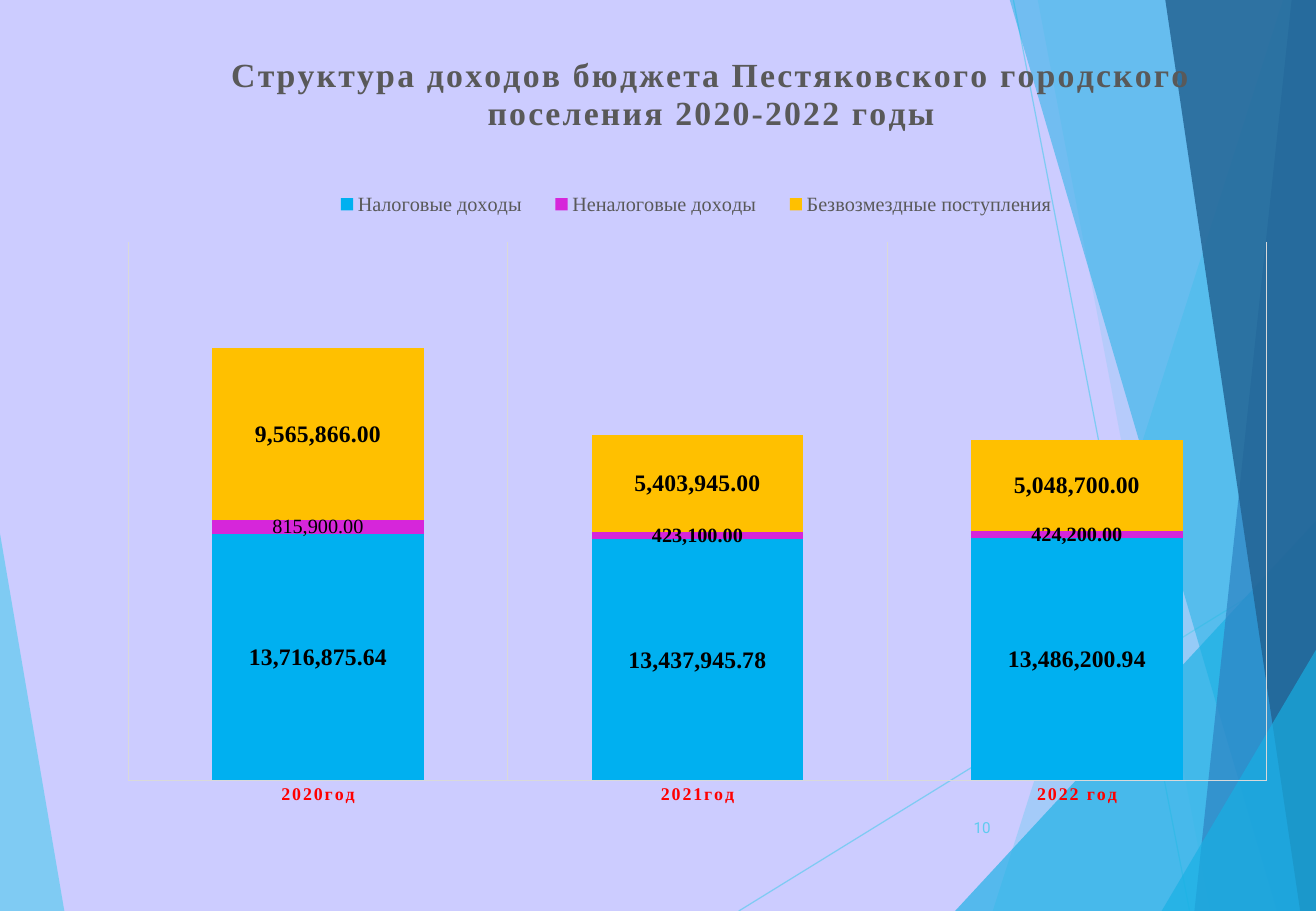
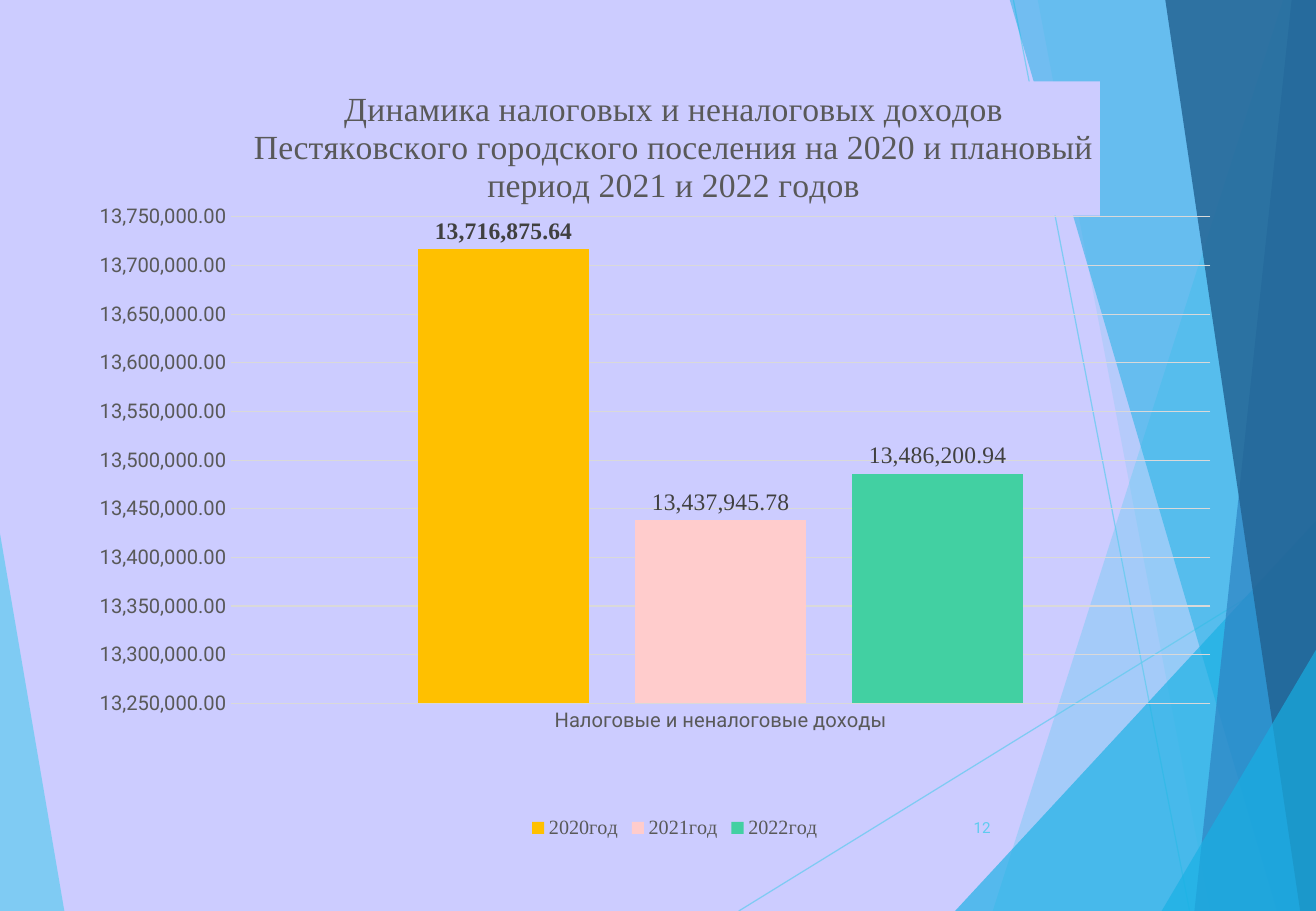
from dataclasses import dataclass

from lxml.etree import SubElement
from pptx import Presentation
from pptx.chart.data import CategoryChartData
from pptx.dml.color import RGBColor
from pptx.enum.chart import XL_CHART_TYPE as ChartType
from pptx.enum.chart import XL_LABEL_POSITION as LabelPosition
from pptx.enum.chart import XL_LEGEND_POSITION as LegendPosition
from pptx.enum.chart import XL_TICK_MARK as TickMark
from pptx.enum.shapes import MSO_CONNECTOR as Connector
from pptx.enum.text import MSO_ANCHOR as Anchor
from pptx.enum.text import PP_ALIGN as Align
from pptx.oxml import parse_xml
from pptx.oxml.ns import nsdecls, qn
from pptx.util import Inches, Pt


@dataclass(frozen=True)
class Theme:
    background: str = "CCCCFF"
    sky: str = "5FCBEF"
    cyan: str = "17B0E4"
    blue: str = "2E83C3"
    navy: str = "226292"
    grid: str = "D9D9D9"
    gray: str = "595959"
    dark: str = "404040"
    black: str = "000000"
    red: str = "FF0000"
    tax: str = "00B0F0"
    non_tax: str = "D626DA"
    gold: str = "FFC000"
    pink: str = "FFCCCC"
    green: str = "42D0A2"
    sans: str = "Roboto"
    serif: str = "Times New Roman"
    title_size: float = 20
    label_size: float = 14
    text_size: float = 12
    year_size: float = 10.6
    chart_size: float = 10
    number_size: float = 9
    letter_gap: float = 1.2
    hairline: float = 0.75
    number_format: str = "#,##0.00"


THEME = Theme()
WIDTH, HEIGHT = 10.83, 7.5

# Colour, opacity in percent, corners
LEFT_FACET = (THEME.sky, 70, [(0, 4.39), (0.53, HEIGHT), (0, HEIGHT)])
RIGHT_FACETS = [
    (THEME.sky, 36, [(10.56, 0), (8.17, HEIGHT), (WIDTH, HEIGHT), (WIDTH, 0)]),
    (THEME.sky, 20, [(8.54, 0), (9.96, HEIGHT), (WIDTH, HEIGHT), (WIDTH, 0)]),
    (THEME.cyan, 66, [(7.86, HEIGHT), (WIDTH, 4.29), (WIDTH, HEIGHT)]),
    (THEME.cyan, 50, [(8.31, 0), (10.51, HEIGHT), (WIDTH, HEIGHT), (WIDTH, 0)]),
    (THEME.blue, 70, [(10.63, 0), (9.83, HEIGHT), (WIDTH, HEIGHT), (WIDTH, 0)]),
    (THEME.navy, 82, [(9.59, 0), (10.7, HEIGHT), (WIDTH, HEIGHT), (WIDTH, 0)]),
    (THEME.cyan, 66, [(9.56, HEIGHT), (WIDTH, 5.35), (WIDTH, HEIGHT)]),
]
RAYS = [((6.08, HEIGHT), (WIDTH, 4.57)), ((8.34, 0), (9.79, HEIGHT))]


def rgb(color):
    return RGBColor.from_string(color)


def set_fill(fill, color):
    fill.solid()
    fill.fore_color.rgb = rgb(color)


def set_line(line, color):
    line.color.rgb = rgb(color)
    line.width = Pt(THEME.hairline)


def set_font(font, size, color, name=THEME.serif, bold=False):
    font.size = Pt(size)
    font.name = name
    font.bold = bold
    font.color.rgb = rgb(color)


def set_opacity(shape, percent):
    for color in shape.element.spPr.iter(qn("a:srgbClr")):
        SubElement(color, qn("a:alpha"), val=str(percent * 1000))


def add_facet(slide, color, opacity, corners):
    points = [(Inches(x), Inches(y)) for x, y in corners]
    builder = slide.shapes.build_freeform(*points[0])
    builder.add_line_segments(points[1:], close=True)
    shape = builder.convert_to_shape()
    shape.shadow.inherit = False
    set_fill(shape.fill, color)
    shape.line.fill.background()
    set_opacity(shape, opacity)


def add_ray(slide, start, end):
    ends = [Inches(value) for value in start + end]
    ray = slide.shapes.add_connector(Connector.STRAIGHT, *ends)
    set_line(ray.line, THEME.sky)
    set_opacity(ray, 70)
    SubElement(ray.element.spPr, qn("a:effectLst"))


def add_page_number(slide, number):
    box = slide.shapes.add_textbox(Inches(7.64), Inches(6.61), Inches(0.61), Inches(0.4))
    frame = box.text_frame
    frame.word_wrap = True
    frame.vertical_anchor = Anchor.MIDDLE
    paragraph = frame.paragraphs[0]
    paragraph.alignment = Align.RIGHT
    run = paragraph.add_run()
    run.text = str(number)
    set_font(run.font, THEME.number_size, THEME.sky, THEME.sans)


def add_base_slide(presentation):
    slide = presentation.slides.add_slide(presentation.slide_layouts[6])
    add_facet(slide, *LEFT_FACET)
    for start, end in RAYS:
        add_ray(slide, start, end)
    for facet in RIGHT_FACETS:
        add_facet(slide, *facet)
    return slide


def chart_part(chart, tag):
    return next(chart.element.iter(qn(tag)))


def place(part, index, x, y, width=None, height=None, inner=False):
    """Give a chart part a fixed place, in fractions of the chart."""
    for old in part.findall(qn("c:layout")):
        part.remove(old)
    layout = parse_xml(f"<c:layout {nsdecls('c')}><c:manualLayout/></c:layout>")
    manual = layout[0]
    if inner:
        SubElement(manual, qn("c:layoutTarget"), val="inner")
    for tag in ("xMode", "yMode"):
        SubElement(manual, qn("c:" + tag), val="edge")
    for tag, value in zip("xywh", (x, y, width, height)):
        if value is not None:
            SubElement(manual, qn("c:" + tag), val=str(value))
    part.insert(index, layout)


def clear_background(chart):
    xml = f"<c:spPr {nsdecls('c', 'a')}><a:noFill/><a:ln><a:noFill/></a:ln></c:spPr>"
    chart_part(chart, "c:plotArea").append(parse_xml(xml))
    chart.element.find(qn("c:txPr")).addprevious(parse_xml(xml))


def add_column_chart(slide, kind, area, categories, series, plot_area, gap, overlap):
    """Series are (name, values, colour, label size, label bold)."""
    data = CategoryChartData(number_format=THEME.number_format)
    data.categories = categories
    for name, values, *_ in series:
        data.add_series(name, values)
    lengths = [Inches(value) for value in area]
    chart = slide.shapes.add_chart(kind, *lengths, data).chart
    set_font(chart.font, THEME.chart_size, THEME.black, THEME.sans)
    clear_background(chart)
    place(chart_part(chart, "c:plotArea"), 0, *plot_area, inner=True)
    plot = chart.plots[0]
    plot.vary_by_categories = False
    plot.gap_width = gap
    plot.overlap = overlap
    label_color = THEME.black if kind == ChartType.COLUMN_STACKED else THEME.dark
    for column, (_, _, color, size, bold) in zip(plot.series, series):
        set_fill(column.format.fill, color)
        column.invert_if_negative = False
        labels = column.data_labels
        labels.show_value = True
        labels.number_format = THEME.number_format
        labels.number_format_is_linked = False
        set_font(labels.font, size, label_color, bold=bold)
        if kind == ChartType.COLUMN_CLUSTERED:
            labels.position = LabelPosition.OUTSIDE_END
    return chart


def add_title(chart, text, position, bold=False):
    chart.has_title = True
    run = chart.chart_title.text_frame.paragraphs[0].add_run()
    run.text = text
    set_font(run.font, THEME.title_size, THEME.gray, bold=bold)
    place(chart_part(chart, "c:title"), 1, *position)


def add_legend(chart, side, area):
    chart.has_legend = True
    chart.legend.position = side
    chart.legend.include_in_layout = False
    set_font(chart.legend.font, THEME.text_size, THEME.gray)
    place(chart_part(chart, "c:legend"), 1, *area)


def space_letters(part, tag):
    for properties in part.iter(qn(tag)):
        properties.set("spc", str(round(THEME.letter_gap * 100)))


def style_axis(axis, size, color, name, bold=False, grid=False):
    axis.major_tick_mark = axis.minor_tick_mark = TickMark.NONE
    set_font(axis.tick_labels.font, size, color, name, bold)
    axis.has_major_gridlines = grid
    if grid:
        set_line(axis.major_gridlines.format.line, THEME.grid)


def set_scale(axis, low, high, step):
    axis.minimum_scale, axis.maximum_scale, axis.major_unit = low, high, step


def add_structure_slide(presentation):
    slide = add_base_slide(presentation)
    series = [
        ("Налоговые доходы", (13716875.64, 13437945.78, 13486200.94),
         THEME.tax, THEME.label_size, True),
        ("Неналоговые доходы", (815900, 423100, 424200),
         THEME.non_tax, THEME.text_size, True),
        ("Безвозмездные поступления", (9565866, 5403945, 5048700),
         THEME.gold, THEME.label_size, True),
    ]
    chart = add_column_chart(
        slide, ChartType.COLUMN_STACKED, (0.49, 0.2, 10.48, 7.06),
        ["2020год", "2021год", "2022 год"], series,
        (0.054, 0.254, 0.894, 0.628), gap=79, overlap=100)
    first_label = chart.plots[0].series[1].points[0].data_label
    set_font(first_label.font, THEME.text_size, THEME.black)

    add_title(chart, "Структура доходов бюджета Пестяковского городского "
              "поселения 2020-2022 годы", (0.13, 0.026), bold=True)
    space_letters(chart_part(chart, "c:title"), "a:rPr")
    add_legend(chart, LegendPosition.TOP, (0.2, 0.18, 0.6, 0.06))

    years = chart.category_axis
    style_axis(years, THEME.year_size, THEME.red, THEME.serif, bold=True, grid=True)
    set_line(years.format.line, THEME.grid)
    space_letters(chart_part(chart, "c:catAx"), "a:defRPr")
    amounts = chart.value_axis
    amounts.has_major_gridlines = False
    amounts.visible = False
    set_scale(amounts, 0, 30_000_000, 5_000_000)
    add_page_number(slide, 10)


def add_dynamics_slide(presentation):
    slide = add_base_slide(presentation)
    series = [
        ("2020год", (13716875.64,), THEME.gold, THEME.label_size, True),
        ("2021год", (13437945.78,), THEME.pink, THEME.label_size, False),
        ("2022год", (13486200.94,), THEME.green, THEME.label_size, False),
    ]
    chart = add_column_chart(
        slide, ChartType.COLUMN_CLUSTERED, (0.82, 0.58, 9.16, 6.38),
        ["Налоговые и неналоговые доходы"], series,
        (0.115, 0.189, 0.883, 0.628), gap=219, overlap=-27)
    # The filled title box must end above the tallest column's label
    add_title(chart, "Динамика налоговых и неналоговых доходов Пестяковского "
              "городского поселения на 2020 и плановый период 2021 и 2022 годов",
              (0.13, 0.014))
    set_fill(chart.chart_title.format.fill, THEME.background)
    add_legend(chart, LegendPosition.BOTTOM, (0.38, 0.955, 0.27, 0.045))

    style_axis(chart.category_axis, THEME.text_size, THEME.gray, THEME.sans)
    set_line(chart.category_axis.format.line, THEME.grid)
    amounts = chart.value_axis
    style_axis(amounts, THEME.text_size, THEME.gray, THEME.sans, grid=True)
    amounts.format.line.fill.background()
    amounts.tick_labels.number_format = THEME.number_format
    amounts.tick_labels.number_format_is_linked = False
    set_scale(amounts, 13_250_000, 13_750_000, 50_000)
    add_page_number(slide, 12)


def main():
    presentation = Presentation()
    presentation.slide_width = Inches(WIDTH)
    presentation.slide_height = Inches(HEIGHT)
    set_fill(presentation.slide_master.background.fill, THEME.background)
    add_structure_slide(presentation)
    add_dynamics_slide(presentation)
    presentation.save("out.pptx")


if __name__ == "__main__":
    main()
